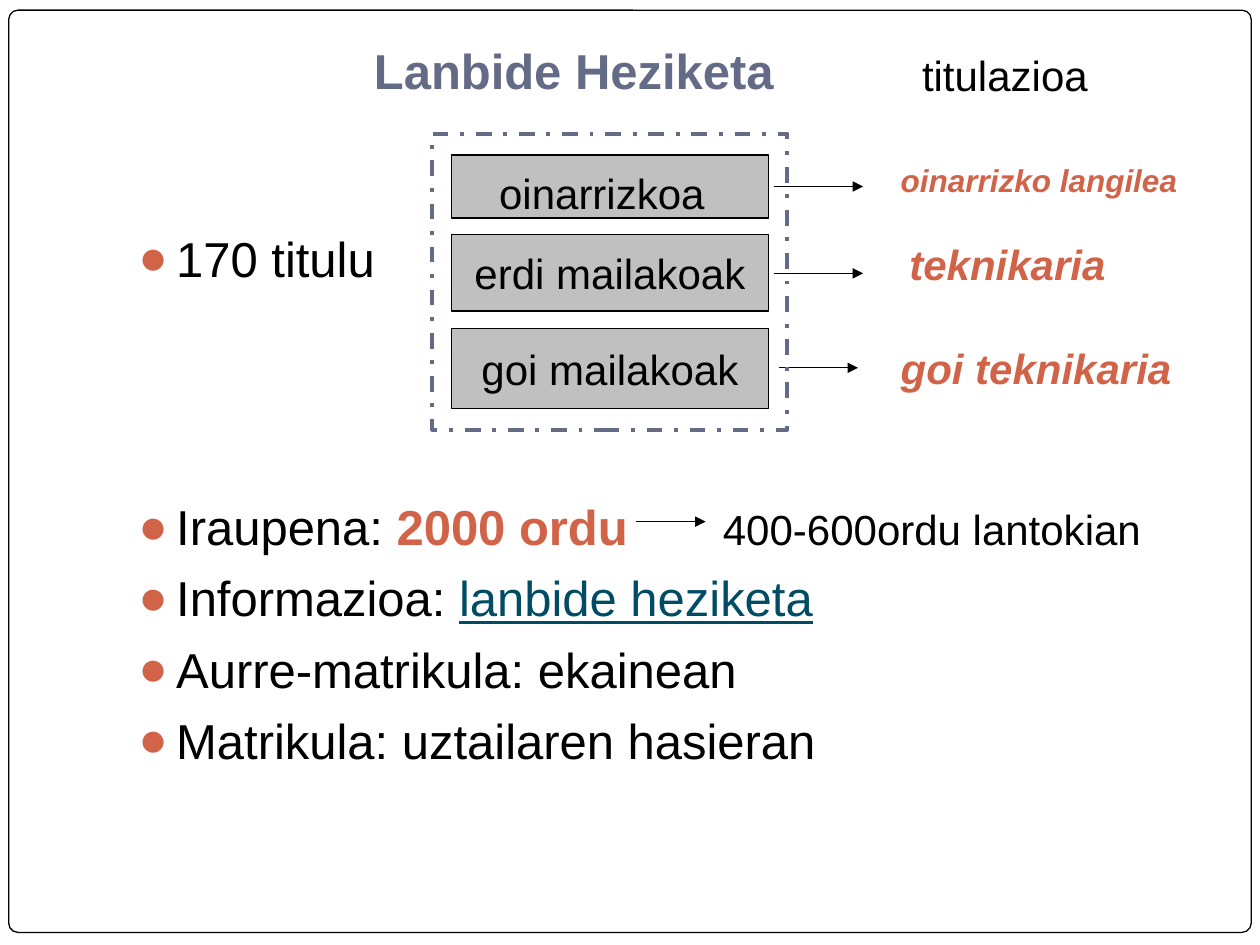
"""Build the vocational training slide: levels, qualifications and key facts."""
from dataclasses import dataclass

from lxml import etree
from pptx import Presentation
from pptx import util as u
from pptx.dml.color import RGBColor
from pptx.enum import dml, shapes, text
from pptx.oxml.ns import qn

FONT = "Arial"
BLACK, WHITE, GREY = "000000", "FFFFFF", "C0C0C0"
SLATE, RUST, TEAL = "646B86", "D16349", "004C64"


@dataclass(frozen=True)
class Box:
    x: float
    y: float
    w: float
    h: float


@dataclass(frozen=True)
class Level:
    name: str
    box: Box
    name_format: dict
    arrow: tuple[float, float, float]
    title: str
    title_box: Box
    title_size: float = 24


@dataclass(frozen=True)
class Fact:
    runs: list[tuple[str, dict]]
    before: float = 7


MIDDLE = dict(align=text.PP_ALIGN.CENTER, anchor=text.MSO_ANCHOR.MIDDLE)
LEVELS = [
    Level("oinarrizkoa", Box(257.8, 88.6, 181.4, 36), dict(insets=(27.4, 7.2, 7.2, 7.2)),
          (442.1, 493.2, 106.6), "oinarrizko langilea", Box(507.6, 88.6, 187.9, 36), 18),
    Level("erdi mailakoak", Box(257.8, 133.9, 181.4, 43.9), MIDDLE,
          (442.1, 493.2, 156.2), "teknikaria", Box(512.6, 132.5, 141.8, 36)),
    Level("goi mailakoak", Box(257.8, 187.9, 181.4, 45.4), MIDDLE,
          (445, 490.3, 210.2), "goi teknikaria", Box(507.6, 192.2, 187.9, 36)),
]
FACTS = [
    Fact([("170 titulu", {})], 0),
    Fact([("Iraupena: ", {}), ("2000 ordu", dict(color=RUST, bold=True)),
          ("\t400-600ordu lantokian", dict(size=24))], 119.8),
    Fact([("Informazioa: ", {}), ("lanbide heziketa", dict(color=TEAL, underline=True))]),
    Fact([("Aurre-matrikula: ekainean", {})]),
    Fact([("Matrikula: uztailaren hasieran", {})]),
]


def rgb(value: str) -> RGBColor:
    """Turn a hex string into a colour."""
    return RGBColor.from_string(value)


def place(box: Box) -> tuple:
    """Give a box's position and size as lengths."""
    return u.Pt(box.x), u.Pt(box.y), u.Pt(box.w), u.Pt(box.h)


def add_run(p, content: str, size: float = 24, color: str = BLACK, bold: bool = False,
            italic: bool = False, underline: bool = False) -> None:
    """Append a formatted run to a paragraph."""
    r = p.add_run()
    r.text = content
    f = r.font
    f.name, f.size, f.bold, f.italic, f.underline = FONT, u.Pt(size), bold, italic, underline
    f.color.rgb = rgb(color)


def frame(sp, insets=(7.2, 3.6, 7.2, 3.6), anchor=text.MSO_ANCHOR.TOP, wrap: bool = True):
    """Set up and return a shape's text frame."""
    tf = sp.text_frame
    tf.word_wrap = wrap
    tf.vertical_anchor = anchor
    tf.margin_left, tf.margin_top, tf.margin_right, tf.margin_bottom = map(u.Pt, insets)
    return tf


def write(sp, content: str, insets=(7.2, 3.6, 7.2, 3.6), anchor=text.MSO_ANCHOR.TOP,
          align=text.PP_ALIGN.LEFT, **style) -> None:
    """Write one formatted paragraph into a shape."""
    p = frame(sp, insets, anchor).paragraphs[0]
    p.alignment = align
    add_run(p, content, **style)


def add_box(s, box: Box, kind=shapes.MSO_SHAPE.RECTANGLE, fill: str | None = None,
            line: str = BLACK, width: float = 0.75):
    """Draw an outlined shape with an optional fill."""
    sp = s.shapes.add_shape(kind, *place(box))
    sp.shadow.inherit = False
    if fill:
        sp.fill.solid()
        sp.fill.fore_color.rgb = rgb(fill)
    else:
        sp.fill.background()
    sp.line.color.rgb = rgb(line)
    sp.line.width = u.Pt(width)
    return sp


def add_arrow(s, x1: float, x2: float, y: float) -> None:
    """Draw a horizontal arrow pointing right."""
    c = s.shapes.add_connector(shapes.MSO_CONNECTOR.STRAIGHT,
                               u.Pt(x1), u.Pt(y), u.Pt(x2), u.Pt(y))
    c.line.color.rgb = rgb(BLACK)
    c.line.width = u.Pt(0.75)
    etree.SubElement(c.line._get_or_add_ln(), qn("a:tailEnd"), type="triangle")
    etree.SubElement(c._element.spPr, qn("a:effectLst"))


def add_bullet(p, indent: float, tab: float) -> None:
    """Give a paragraph a round bullet, a hanging indent and a tab stop."""
    pPr = p._p.get_or_add_pPr()
    pPr.set("marL", str(u.Pt(indent)))
    pPr.set("indent", str(-u.Pt(indent)))
    color = etree.SubElement(pPr, qn("a:buClr"))
    etree.SubElement(color, qn("a:srgbClr"), val=RUST)
    etree.SubElement(pPr, qn("a:buFont"), typeface=FONT)
    etree.SubElement(pPr, qn("a:buChar"), char="●")
    tabs = etree.SubElement(pPr, qn("a:tabLst"))
    etree.SubElement(tabs, qn("a:tab"), pos=str(u.Pt(tab)), algn="l")


def add_facts(s, box: Box, facts: list[Fact]) -> None:
    """Write the bulleted list of facts."""
    tf = frame(s.shapes.add_textbox(*place(box)))
    for i, fact in enumerate(facts):
        p = tf.add_paragraph() if i else tf.paragraphs[0]
        add_bullet(p, 21.6, 334)
        p.space_before = u.Pt(fact.before)
        for content, style in fact.runs:
            add_run(p, content, **{"size": 28, **style})


def add_level(s, level: Level) -> None:
    """Draw a level, its arrow and the qualification it leads to."""
    write(add_box(s, level.box, fill=GREY), level.name, **level.name_format)
    add_arrow(s, *level.arrow)
    write(s.shapes.add_textbox(*place(level.title_box)), level.title,
          size=level.title_size, color=RUST, bold=True, italic=True)


def main() -> None:
    """Build and save the slide."""
    prs = Presentation()
    prs.slide_width, prs.slide_height = u.Pt(720), u.Pt(540)
    s = prs.slides.add_slide(prs.slide_layouts[6])
    border = add_box(s, Box(5, 5.8, 710, 527), shapes.MSO_SHAPE.ROUNDED_RECTANGLE, WHITE)
    border.adjustments[0] = 0.01
    write(s.shapes.add_textbox(*place(Box(206.6, 20.2, 267.1, 43.9))), "Lanbide Heziketa",
          insets=(7.2, 3.6, 7.2, 7.2), anchor=text.MSO_ANCHOR.BOTTOM,
          size=28, color=SLATE, bold=True)
    write(s.shapes.add_textbox(*place(Box(519.8, 24.5, 109.4, 36))), "titulazioa")
    add_facts(s, Box(72, 127, 622.8, 396), FACTS)
    add_arrow(s, 363.6, 403.2, 298.1)
    for level in LEVELS:
        add_level(s, level)
    group = add_box(s, Box(247, 76.3, 203, 169.2), line=SLATE, width=2.25)
    group.line.dash_style = dml.MSO_LINE.DASH_DOT
    prs.save("out.pptx")


if __name__ == "__main__":
    main()
